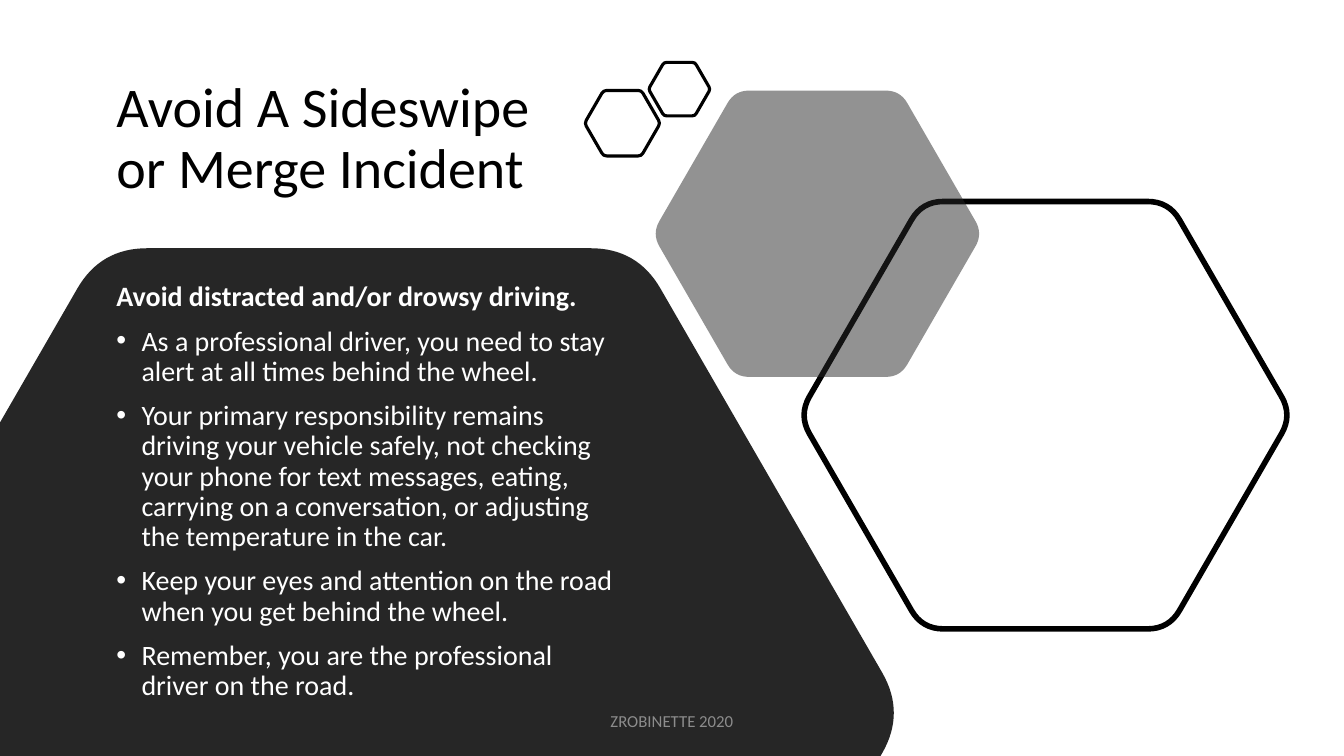
from dataclasses import dataclass
from math import cos, dist, pi, sin, sqrt
from typing import Callable, Optional

from lxml import etree
from pptx import Presentation
from pptx.dml.color import RGBColor
from pptx.enum.text import MSO_ANCHOR, MSO_AUTO_SIZE, PP_ALIGN
from pptx.oxml.ns import qn
from pptx.util import Pt

LEFT, CENTER = PP_ALIGN.LEFT, PP_ALIGN.CENTER
TOP, MIDDLE = MSO_ANCHOR.TOP, MSO_ANCHOR.MIDDLE
NO_FIT = MSO_AUTO_SIZE.NONE

BLACK = RGBColor(0x00, 0x00, 0x00)
WHITE = RGBColor(0xFF, 0xFF, 0xFF)
CHARCOAL = RGBColor(0x26, 0x26, 0x26)
GREY = RGBColor(0x8C, 0x8C, 0x8C)

FONT = "Calibri"
SLIDE_WIDTH, SLIDE_HEIGHT = 960, 540
CORNER_RATIO = 0.05
PEN_SCALE = 100
BULLET_INDENT = 18

TITLE = "Avoid A Sideswipe or Merge Incident"
ADVICE_HEADING = "Avoid distracted and/or drowsy driving."
ADVICE = [
    "As a professional driver, you need to stay alert at all times behind the wheel.",
    "Your primary responsibility remains driving your vehicle safely, not checking "
    "your phone for text messages, eating, carrying on a conversation, or adjusting "
    "the temperature in the car.",
    "Keep your eyes and attention on the road when you get behind the wheel.",
    "Remember, you are the professional driver on the road.",
]
FOOTER = "ZROBINETTE 2020"

Point = tuple[float, float]


@dataclass(frozen=True)
class Hexagon:
    center_x: float
    center_y: float
    height: float
    fill: Optional[RGBColor] = None
    opacity: int = 100
    line_width: float = 0


@dataclass(frozen=True)
class TextStyle:
    size: float
    color: RGBColor
    align: PP_ALIGN = LEFT
    anchor: MSO_ANCHOR = MIDDLE
    line_spacing: float = 1.0
    space_before: float = 0


LARGE_HEXAGONS = [
    Hexagon(263.5, 509.2, 663.8, fill=CHARCOAL),
    Hexagon(746.8, 296.6, 305.3, line_width=4),
    Hexagon(583.9, 167, 204.5, fill=CHARCOAL, opacity=50),
]
SMALL_HEXAGONS = [
    Hexagon(444.6, 88, 46.8, line_width=2.25),
    Hexagon(485.3, 63.7, 38.2, line_width=2.25),
]
TITLE_STYLE = TextStyle(40, BLACK, line_spacing=0.9)
ADVICE_STYLE = TextStyle(20, WHITE, anchor=TOP, line_spacing=0.9, space_before=10)
FOOTER_STYLE = TextStyle(12, GREY, align=CENTER)


def mix(start: Point, end: Point, share: float) -> Point:
    return (start[0] + (end[0] - start[0]) * share,
            start[1] + (end[1] - start[1]) * share)


def clip(outline: list[Point], depth: Callable[[Point], float]) -> list[Point]:
    kept = []
    for i, point in enumerate(outline):
        previous = outline[i - 1]
        before, here = depth(previous), depth(point)
        if (before < 0) != (here < 0):
            kept.append(mix(previous, point, before / (before - here)))
        if here >= 0:
            kept.append(point)
    return kept


def hexagon_outline(hexagon: Hexagon) -> tuple[list[Point], list[int]]:
    radius = hexagon.height / sqrt(3)
    corners = [(hexagon.center_x + radius * cos(i * pi / 3),
                hexagon.center_y + radius * sin(i * pi / 3)) for i in range(6)]
    visible = clip(corners, lambda point: point[0])
    visible = clip(visible, lambda point: SLIDE_HEIGHT - point[1])
    cut = CORNER_RATIO * hexagon.height
    outline, crests = [], []
    for i, corner in enumerate(visible):
        if corner not in corners:
            outline.append(corner)
            continue
        previous, following = visible[i - 1], visible[(i + 1) % len(visible)]
        entry = mix(corner, previous, cut / dist(corner, previous))
        leave = mix(corner, following, cut / dist(corner, following))
        crests.append(len(outline) + 1)
        outline += [entry, mix(corner, mix(entry, leave, 0.5), 0.5), leave]
    return outline, crests


def round_corners(shape, crests: list[int]) -> None:
    segments = list(shape._element.find(".//" + qn("a:path")))
    for crest in crests:
        entry, middle, leave = (
            (int(point.get("x")), int(point.get("y")))
            for segment in segments[crest - 1:crest + 2]
            for point in segment.findall(qn("a:pt")))
        corner = mix(mix(entry, leave, 0.5), middle, 2)
        curve = etree.Element(qn("a:cubicBezTo"))
        for x, y in (mix(entry, corner, 2 / 3), mix(leave, corner, 2 / 3), leave):
            etree.SubElement(curve, qn("a:pt"), x=str(round(x)), y=str(round(y)))
        outline = segments[crest].getparent()
        outline.replace(segments[crest], curve)
        outline.remove(segments[crest + 1])


def draw_hexagon(shapes, hexagon: Hexagon) -> None:
    outline, crests = hexagon_outline(hexagon)
    pen = [(round(x * PEN_SCALE), round(y * PEN_SCALE)) for x, y in outline]
    builder = shapes.build_freeform(*pen[0], scale=Pt(1) / PEN_SCALE)
    builder.add_line_segments(pen[1:], close=True)
    shape = builder.convert_to_shape()
    round_corners(shape, crests)
    shape.shadow.inherit = False
    if hexagon.fill is None:
        shape.fill.background()
    else:
        shape.fill.solid()
        shape.fill.fore_color.rgb = hexagon.fill
        if hexagon.opacity < 100:
            color = shape._element.spPr.find(".//" + qn("a:srgbClr"))
            etree.SubElement(color, qn("a:alpha"), val=str(hexagon.opacity * 1000))
    if hexagon.line_width:
        shape.line.color.rgb = BLACK
        shape.line.width = Pt(hexagon.line_width)
    else:
        shape.line.fill.background()


def place(shape, left: float, top: float, width: float, height: float) -> None:
    shape.left, shape.top = Pt(left), Pt(top)
    shape.width, shape.height = Pt(width), Pt(height)


def write(shape, lines: list[str], style: TextStyle) -> None:
    frame = shape.text_frame
    frame.text = "\n".join(lines)
    frame.word_wrap = True
    frame.auto_size = NO_FIT
    frame.vertical_anchor = style.anchor
    for paragraph in frame.paragraphs:
        paragraph.alignment = style.align
        paragraph.line_spacing = style.line_spacing
        paragraph.space_before = Pt(style.space_before)
        for run in paragraph.runs:
            run.font.name = FONT
            run.font.size = Pt(style.size)
            run.font.color.rgb = style.color


def add_bullet(paragraph) -> None:
    properties = paragraph._p.get_or_add_pPr()
    properties.set("marL", str(Pt(BULLET_INDENT)))
    properties.set("indent", str(-Pt(BULLET_INDENT)))
    etree.SubElement(properties, qn("a:buFont"), typeface="Arial")
    etree.SubElement(properties, qn("a:buChar"), char="•")


def main() -> None:
    presentation = Presentation()
    presentation.slide_width, presentation.slide_height = Pt(SLIDE_WIDTH), Pt(SLIDE_HEIGHT)
    slide = presentation.slides.add_slide(presentation.slide_layouts.get_by_name("Title Only"))

    title = slide.shapes.title
    place(title, 76, 35, 337, 129.6)
    write(title, [TITLE], TITLE_STYLE)

    for hexagon in LARGE_HEXAGONS:
        draw_hexagon(slide.shapes, hexagon)
    small_pair = slide.shapes.add_group_shape()
    for hexagon in SMALL_HEXAGONS:
        draw_hexagon(small_pair.shapes, hexagon)

    advice = slide.shapes.add_textbox(Pt(76), Pt(198.4), Pt(373.7), Pt(331.2))
    write(advice, [ADVICE_HEADING, *ADVICE], ADVICE_STYLE)
    heading, *bullets = advice.text_frame.paragraphs
    heading.runs[0].font.bold = True
    for bullet in bullets:
        add_bullet(bullet)

    footer = slide.shapes.add_textbox(Pt(318), Pt(500.5), Pt(324), Pt(28.8))
    write(footer, [FOOTER], FOOTER_STYLE)

    presentation.save("out.pptx")


if __name__ == "__main__":
    main()
